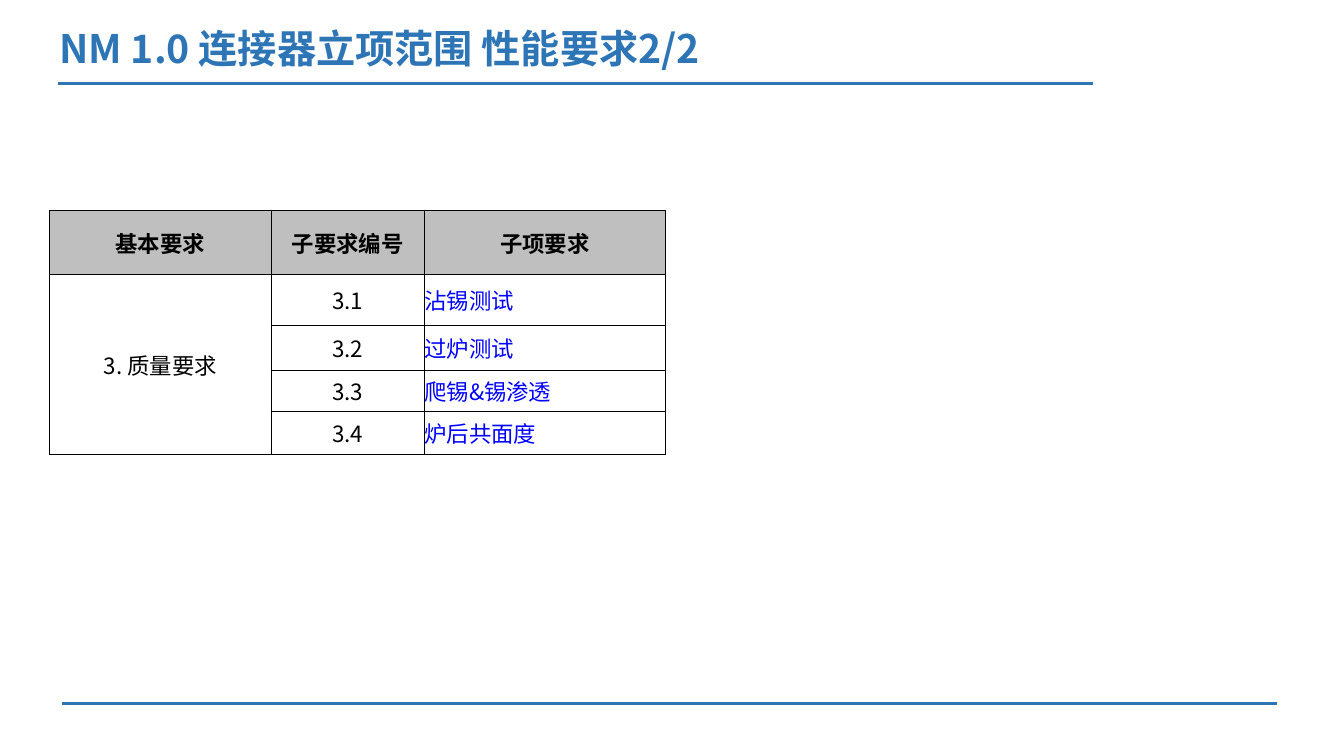
from lxml.etree import SubElement as Sub
from pptx import Presentation
from pptx.dml.color import RGBColor as Rgb
from pptx.enum.shapes import MSO_CONNECTOR as Conn
from pptx.enum.text import MSO_ANCHOR as Anchor, PP_ALIGN as Align
from pptx.oxml import parse_xml
from pptx.oxml.ns import nsdecls, qn
from pptx.util import Inches, Pt

HUES = {"blue": "2E75B6", "link": "0000FF", "ink": "000000", "head": "BFBFBF"}
FACE = "Noto Sans CJK SC"
HEADS = ["基本要求", "子要求编号", "子项要求"]
GROUP = "3. 质量要求"
TESTS = ["沾锡测试", "过炉测试", "爬锡&锡渗透", "炉后共面度"]
COLS = [16.5, 11.4, 17.93]
ROWS = [8.4, 6.8, 5.87, 5.5, 5.73]


class Deck:
    """Draws on one slide; lengths are percent of its width or height."""

    def __init__(self):
        self.prs = Presentation()
        self.prs.slide_width, self.prs.slide_height = Inches(13.33), Inches(7.5)
        self.shapes = self.prs.slides.add_slide(self.prs.slide_layouts[6]).shapes

    def x(self, share):
        return round(self.prs.slide_width * share / 100)

    def y(self, share):
        return round(self.prs.slide_height * share / 100)

    def rule(self, left, right, top):
        line = self.shapes.add_connector(
            Conn.STRAIGHT, self.x(left), self.y(top), self.x(right), self.y(top))
        line.line.color.rgb = Rgb.from_string(HUES["blue"])
        line.line.width = Pt(2.25)
        Sub(line._element.spPr, qn("a:effectLst"))

    def label(self, para, text, hue, size, bold=False):
        run = para.add_run()
        run.text = text
        for key, val in {"name": FACE, "size": Pt(size), "bold": bold}.items():
            setattr(run.font, key, val)
        run.font.color.rgb = Rgb.from_string(HUES[hue])
        Sub(run._r.get_or_add_rPr(), qn("a:ea"), typeface=FACE)

    def title(self, text, left, top, width, height):
        box = self.shapes.add_textbox(
            self.x(left), self.y(top), self.x(width), self.y(height))
        frame = box.text_frame
        for key, val in {"word_wrap": True, "vertical_anchor": Anchor.MIDDLE}.items():
            setattr(frame, key, val)
        para = frame.paragraphs[0]
        para.line_spacing = 0.9
        self.label(para, text, "blue", 28, True)

    def edge(self, cell):
        """Give the cell a thin border on all four sides."""
        props = cell._tc.get_or_add_tcPr()
        for spot, side in enumerate("LRTB"):
            props.insert(spot, parse_xml(
                f'<a:ln{side} {nsdecls("a")} w="6350"><a:solidFill>'
                f'<a:srgbClr val="{HUES["ink"]}"/></a:solidFill></a:ln{side}>'))

    def cell(self, cell, text, head, link):
        margins = dict.fromkeys(
            ["margin_left", "margin_right", "margin_top", "margin_bottom"], 0)
        for key, val in {**margins, "vertical_anchor": Anchor.MIDDLE}.items():
            setattr(cell, key, val)
        if head:
            cell.fill.solid()
            cell.fill.fore_color.rgb = Rgb.from_string(HUES["head"])
        else:
            cell.fill.background()
        self.edge(cell)
        if text:
            para = cell.text_frame.paragraphs[0]
            para.alignment = Align.LEFT if link else Align.CENTER
            self.label(para, text, "link" if link else "ink", 16, head)

    def table(self, data, left, top):
        grid = self.shapes.add_table(
            len(ROWS), len(COLS), self.x(left), self.y(top),
            self.x(sum(COLS)), self.y(sum(ROWS))).table
        for col, width in zip(grid.columns, COLS):
            col.width = self.x(width)
        for row, height in zip(grid.rows, ROWS):
            row.height = self.y(height)
        for r, texts in enumerate(data):
            for c, text in enumerate(texts):
                self.cell(grid.cell(r, c), text, r == 0, r > 0 and c == 2)
        grid.cell(1, 0).merge(grid.cell(len(ROWS) - 1, 0))


def main():
    deck = Deck()
    deck.rule(4.28, 81.32, 11.07)
    deck.rule(4.65, 95.05, 93.07)
    deck.title("NM 1.0 连接器立项范围 性能要求2/2", 3.68, 2.4, 63.17, 8.67)
    body = [["" if n > 1 else GROUP, f"3.{n}", test]
            for n, test in enumerate(TESTS, 1)]
    deck.table([HEADS, *body], 3.68, 27.87)
    deck.prs.save("out.pptx")


if __name__ == "__main__":
    main()
